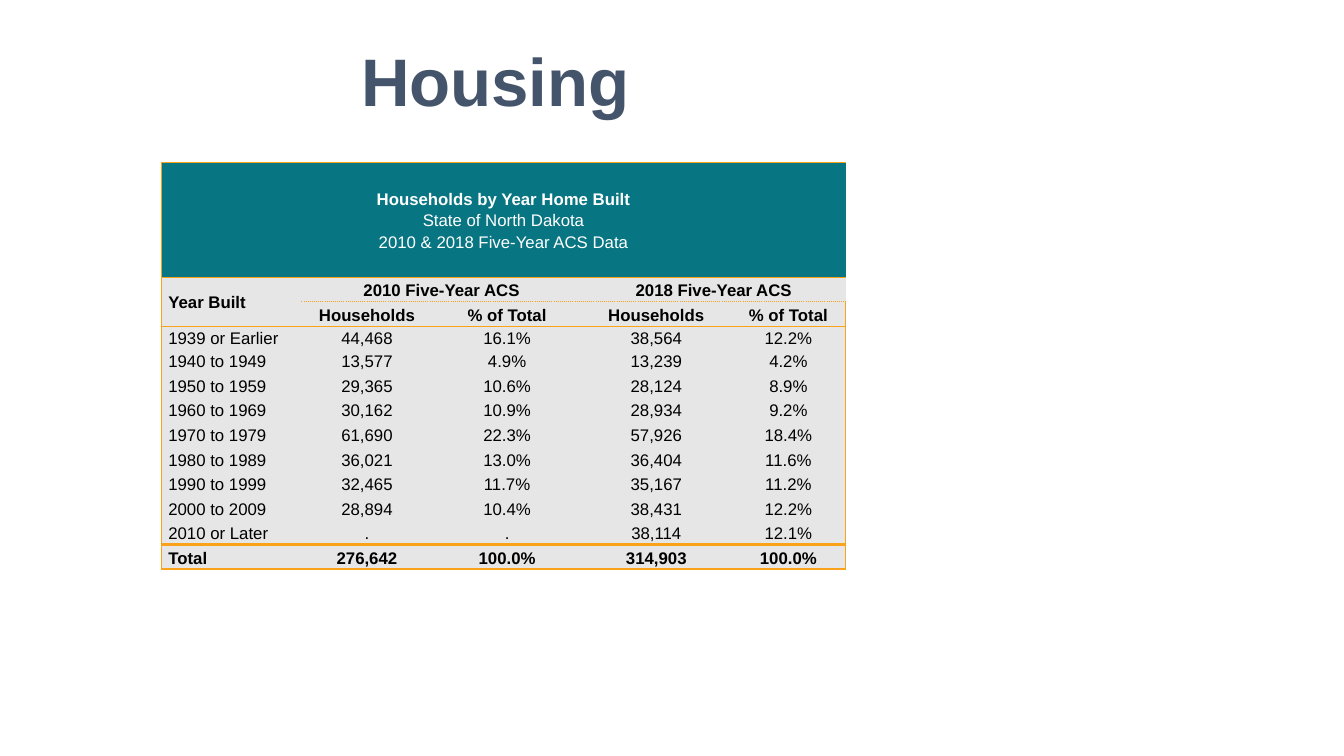
from lxml import etree
from pptx import Presentation
from pptx.dml.color import RGBColor
from pptx.enum.text import MSO_ANCHOR, PP_ALIGN
from pptx.oxml.ns import qn
from pptx.util import Inches, Pt

CENTER, LEFT, MIDDLE = PP_ALIGN.CENTER, PP_ALIGN.LEFT, MSO_ANCHOR.MIDDLE
FONT = "Arial"
COLORS = {"title": "44546A", "band": "087582", "body": "E7E6E6",
          "line": "FAA21A", "light": "FFFFFF", "dark": "000000"}

TITLE = "Housing"
CAPTION = ["Households by Year Home Built", "State of North Dakota",
           "2010 & 2018 Five-Year ACS Data"]
ROWS = [
    ("Year Built", "2010 Five-Year ACS", "", "2018 Five-Year ACS", ""),
    ("", "Households", "% of Total", "Households", "% of Total"),
    ("1939 or Earlier", "44,468", "16.1%", "38,564", "12.2%"),
    ("1940 to 1949", "13,577", "4.9%", "13,239", "4.2%"),
    ("1950 to 1959", "29,365", "10.6%", "28,124", "8.9%"),
    ("1960 to 1969", "30,162", "10.9%", "28,934", "9.2%"),
    ("1970 to 1979", "61,690", "22.3%", "57,926", "18.4%"),
    ("1980 to 1989", "36,021", "13.0%", "36,404", "11.6%"),
    ("1990 to 1999", "32,465", "11.7%", "35,167", "11.2%"),
    ("2000 to 2009", "28,894", "10.4%", "38,431", "12.2%"),
    ("2010 or Later", ".", ".", "38,114", "12.1%"),
    ("Total", "276,642", "100.0%", "314,903", "100.0%"),
]
MERGES = [((0, 0), (0, 4)), ((1, 0), (2, 0)), ((1, 1), (1, 2)), ((1, 3), (1, 4))]
COL_WIDTHS = [1.39, 1.3, 1.48, 1.48, 1.14]
CAPTION_H, FIRST_H, TABLE_H = 1.14, 0.22, 4.04
N_ROWS, N_COLS = len(ROWS) + 1, len(COL_WIDTHS)
ROW_H = (TABLE_H - CAPTION_H - FIRST_H) / (N_ROWS - 2)
ROW_HEIGHTS = [CAPTION_H, ROW_H, ROW_H, FIRST_H] + [ROW_H] * (N_ROWS - 4)
RULES = {0: (1, "solid"), 1: (1, "solid"), 2: (1, "sysDot"), 3: (1, "solid"),
         N_ROWS - 1: (2.25, "solid"), N_ROWS: (1, "solid")}


def rgb(name):
    return RGBColor.from_string(COLORS[name])


def add_run(p, text, size, color, bold):
    r = p.add_run()
    r.text = text
    r.font.name, r.font.size, r.font.bold = FONT, Pt(size), bold
    r.font.color.rgb = rgb(color)


def set_border(cell, side, rule):
    width, dash = rule or (0, "")
    ln = etree.SubElement(cell._tc.get_or_add_tcPr(), qn("a:ln" + side), w=str(Pt(width)))
    if not rule:
        etree.SubElement(ln, qn("a:noFill"))
        return
    fill = etree.SubElement(ln, qn("a:solidFill"))
    etree.SubElement(fill, qn("a:srgbClr"), val=COLORS["line"])
    etree.SubElement(ln, qn("a:prstDash"), val=dash)


def horizontal_rule(edge, col):
    return None if edge == 2 and col == 0 else RULES.get(edge)


def format_cell(cell, row, col):
    outer = (1, "solid")
    set_border(cell, "L", outer if col == 0 else None)
    set_border(cell, "R", outer if col == N_COLS - 1 else None)
    set_border(cell, "T", horizontal_rule(row, col))
    set_border(cell, "B", horizontal_rule(row + 1, col))
    cell.fill.solid()
    cell.fill.fore_color.rgb = rgb("body" if row else "band")
    cell.vertical_anchor = MIDDLE
    cell.margin_left = cell.margin_right = Inches(0.07)
    cell.margin_top = cell.margin_bottom = 0


def write_cell(cell, lines, color, align, bold_lines):
    tf = cell.text_frame
    for i, line in enumerate(lines):
        p = tf.add_paragraph() if i else tf.paragraphs[0]
        p.alignment, p.line_spacing = align, 1.15
        add_run(p, line, 12, color, i < bold_lines)


def add_title(s):
    sp = s.shapes.title
    sp.left, sp.top, sp.width, sp.height = map(Inches, (0.28, 0.33, 9.27, 0.92))
    tf = sp.text_frame
    tf.vertical_anchor = MIDDLE
    p = tf.paragraphs[0]
    p.alignment = CENTER
    add_run(p, TITLE, 48, "title", True)


def add_housing_table(s):
    table = s.shapes.add_table(N_ROWS, N_COLS, Inches(1.6), Inches(1.61),
                               Inches(sum(COL_WIDTHS)), Inches(TABLE_H)).table
    table.first_row = table.horz_banding = False
    for column, width in zip(table.columns, COL_WIDTHS):
        column.width = Inches(width)
    for table_row, height in zip(table.rows, ROW_HEIGHTS):
        table_row.height = Inches(height)
    for row in range(N_ROWS):
        for col in range(N_COLS):
            format_cell(table.cell(row, col), row, col)
    for start, end in MERGES:
        table.cell(*start).merge(table.cell(*end))
    write_cell(table.cell(0, 0), CAPTION, "light", CENTER, 1)
    for row, values in enumerate(ROWS, 1):
        bold = row in (1, 2, N_ROWS - 1)
        for col, value in enumerate(values):
            if value:
                write_cell(table.cell(row, col), [value], "dark",
                           CENTER if col else LEFT, int(bold))


def main():
    prs = Presentation()
    prs.slide_width, prs.slide_height = Inches(13.33), Inches(7.5)
    s = prs.slides.add_slide(prs.slide_layouts[5])
    add_title(s)
    add_housing_table(s)
    prs.save("out.pptx")


if __name__ == "__main__":
    main()
